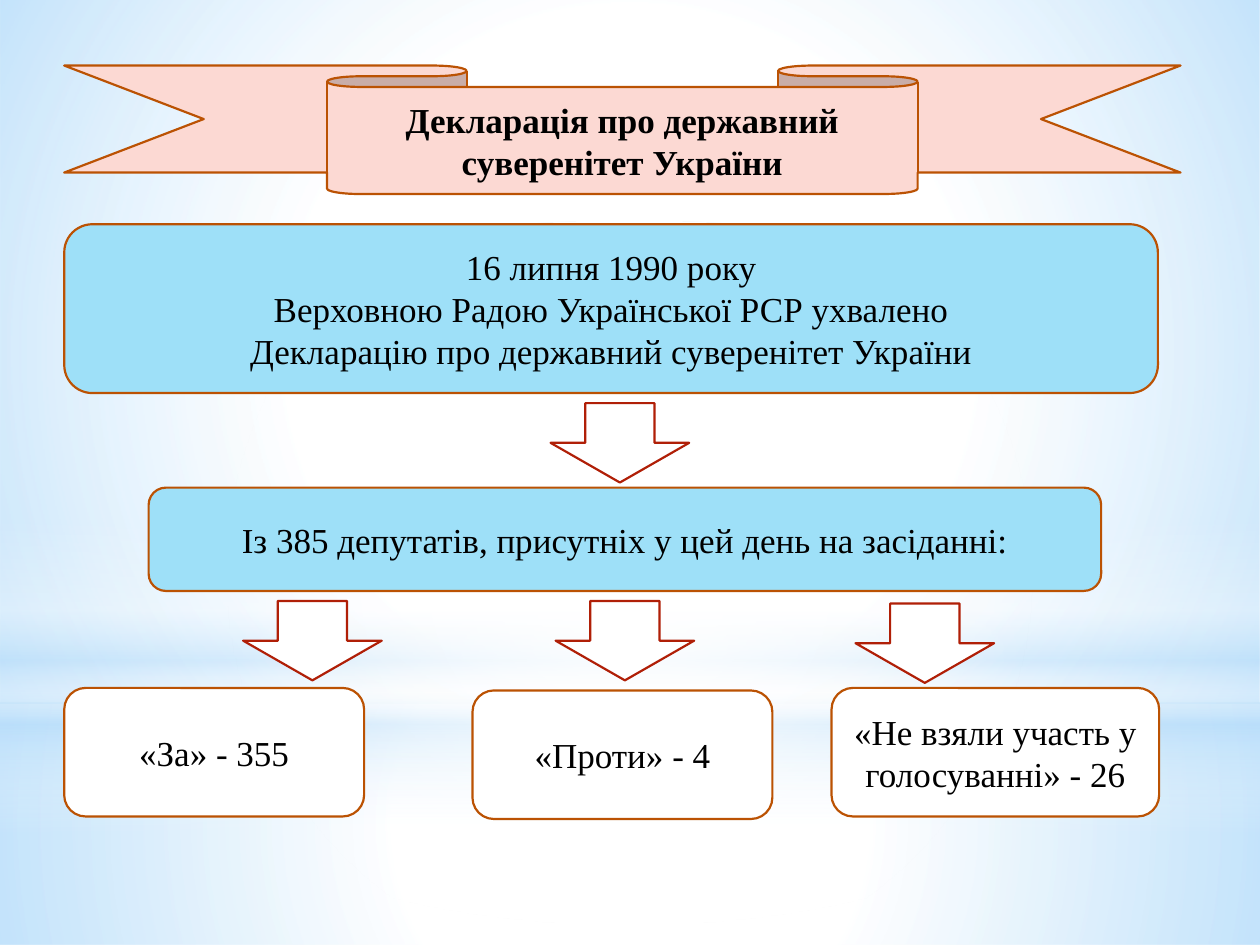
from dataclasses import dataclass
from typing import Optional

from lxml.etree import SubElement
from pptx import Presentation
from pptx.dml.color import RGBColor
from pptx.enum.shapes import MSO_SHAPE
from pptx.enum.text import MSO_ANCHOR, PP_ALIGN
from pptx.oxml.ns import qn
from pptx.util import Inches, Pt

FONT = "Times New Roman"
BLACK, WHITE = "000000", "FFFFFF"
SKY, PINK, GLOW = "9EE0F8", "FCD9D3", "B4DCFA"
BROWN, RED = "BB5203", "B01F07"
ARROW_WIDTH, ARROW_HEIGHT = 1.1, 0.63


@dataclass(frozen=True)
class Area:
    left: float
    top: float
    width: float
    height: float


@dataclass(frozen=True)
class Stop:
    position: int
    color: str
    opacity: int = 100


@dataclass(frozen=True)
class Glow:
    """A soft background layer; it is radial unless an angle is given."""
    area: Area
    stops: tuple[Stop, ...]
    kind: MSO_SHAPE = MSO_SHAPE.RECTANGLE
    angle: Optional[int] = None


@dataclass(frozen=True)
class Panel:
    area: Area
    lines: tuple[str, ...]
    fill: str
    kind: MSO_SHAPE = MSO_SHAPE.ROUNDED_RECTANGLE
    adjustments: tuple[float, ...] = ()
    bold: bool = False


GLOWS = (
    Glow(Area(0, 5.58, 10, 1.92),
         (Stop(0, WHITE, 91), Stop(37, WHITE, 76), Stop(100, GLOW, 79))),
    Glow(Area(0, 0, 10, 5.58),
         (Stop(0, WHITE, 89), Stop(48, WHITE, 62), Stop(100, GLOW, 79))),
    Glow(Area(0, 4.12, 10, 2.5),
         (Stop(0, WHITE, 0), Stop(29, WHITE, 30), Stop(45, GLOW, 40),
          Stop(55, WHITE, 26), Stop(65, GLOW, 60), Stop(100, WHITE, 0)),
         angle=90),
    Glow(Area(0, 1.75, 10, 5.58), (Stop(0, WHITE), Stop(56, WHITE, 0)),
         kind=MSO_SHAPE.OVAL),
)

PANELS = (
    Panel(Area(0.51, 0.52, 8.86, 1.02),
          ("Декларація про державний суверенітет України",), PINK,
          MSO_SHAPE.DOWN_RIBBON, (0.167, 0.529), bold=True),
    Panel(Area(0.51, 1.78, 8.68, 1.34),
          ("16 липня 1990 року",
           "Верховною Радою Української РСР ухвалено",
           "Декларацію про державний суверенітет України"), SKY),
    Panel(Area(1.18, 3.87, 7.56, 0.82),
          ("Із 385 депутатів, присутніх у цей день на засіданні:",), SKY),
    Panel(Area(0.51, 5.46, 2.38, 1.02), ("«За» - 355",), WHITE),
    Panel(Area(3.75, 5.48, 2.38, 1.02), ("«Проти» - 4",), WHITE),
    Panel(Area(6.6, 5.46, 2.6, 1.02),
          ("«Не взяли участь у голосуванні» - 26",), WHITE),
)

ARROW_CORNERS = ((4.37, 3.2), (1.93, 4.77), (4.41, 4.77), (6.79, 4.79))


def rgb(color: str) -> RGBColor:
    return RGBColor.from_string(color)


def add_flat_shape(slide, kind: MSO_SHAPE, area: Area):
    shape = slide.shapes.add_shape(
        kind, Inches(area.left), Inches(area.top),
        Inches(area.width), Inches(area.height))
    shape.shadow.inherit = False
    return shape


def paint(shape, fill: str, line: str) -> None:
    shape.fill.solid()
    shape.fill.fore_color.rgb = rgb(fill)
    shape.line.color.rgb = rgb(line)
    shape.line.width = Pt(1.25)


def add_glow(slide, glow: Glow) -> None:
    shape = add_flat_shape(slide, glow.kind, glow.area)
    shape.line.fill.background()
    shape.fill.gradient()
    gradient = shape.element.spPr.find(qn("a:gradFill"))
    for child in list(gradient):
        gradient.remove(child)
    stop_list = SubElement(gradient, qn("a:gsLst"))
    for stop in glow.stops:
        mark = SubElement(stop_list, qn("a:gs"), pos=str(stop.position * 1000))
        color = SubElement(mark, qn("a:srgbClr"), val=stop.color)
        SubElement(color, qn("a:alpha"), val=str(stop.opacity * 1000))
    if glow.angle is None:
        circle = SubElement(gradient, qn("a:path"), path="circle")
        SubElement(circle, qn("a:fillToRect"),
                   l="50000", t="50000", r="50000", b="50000")
    else:
        SubElement(gradient, qn("a:lin"),
                   ang=str(glow.angle * 60000), scaled="0")


def add_panel(slide, panel: Panel) -> None:
    shape = add_flat_shape(slide, panel.kind, panel.area)
    for index, value in enumerate(panel.adjustments):
        shape.adjustments[index] = value
    paint(shape, panel.fill, BROWN)
    frame = shape.text_frame
    frame.word_wrap = True
    frame.vertical_anchor = MSO_ANCHOR.MIDDLE
    frame.text = "\n".join(panel.lines)
    for paragraph in frame.paragraphs:
        paragraph.alignment = PP_ALIGN.CENTER
        paragraph.font.name = FONT
        paragraph.font.size = Pt(20)
        paragraph.font.bold = panel.bold
        paragraph.font.color.rgb = rgb(BLACK)


def add_down_arrow(slide, left: float, top: float) -> None:
    area = Area(left, top, ARROW_WIDTH, ARROW_HEIGHT)
    paint(add_flat_shape(slide, MSO_SHAPE.DOWN_ARROW, area), WHITE, RED)


def main() -> None:
    presentation = Presentation()
    presentation.slide_width = Inches(10)
    presentation.slide_height = Inches(7.5)
    slide = presentation.slides.add_slide(presentation.slide_layouts[6])
    for glow in GLOWS:
        add_glow(slide, glow)
    for panel in PANELS:
        add_panel(slide, panel)
    for left, top in ARROW_CORNERS:
        add_down_arrow(slide, left, top)
    presentation.save("out.pptx")


if __name__ == "__main__":
    main()
